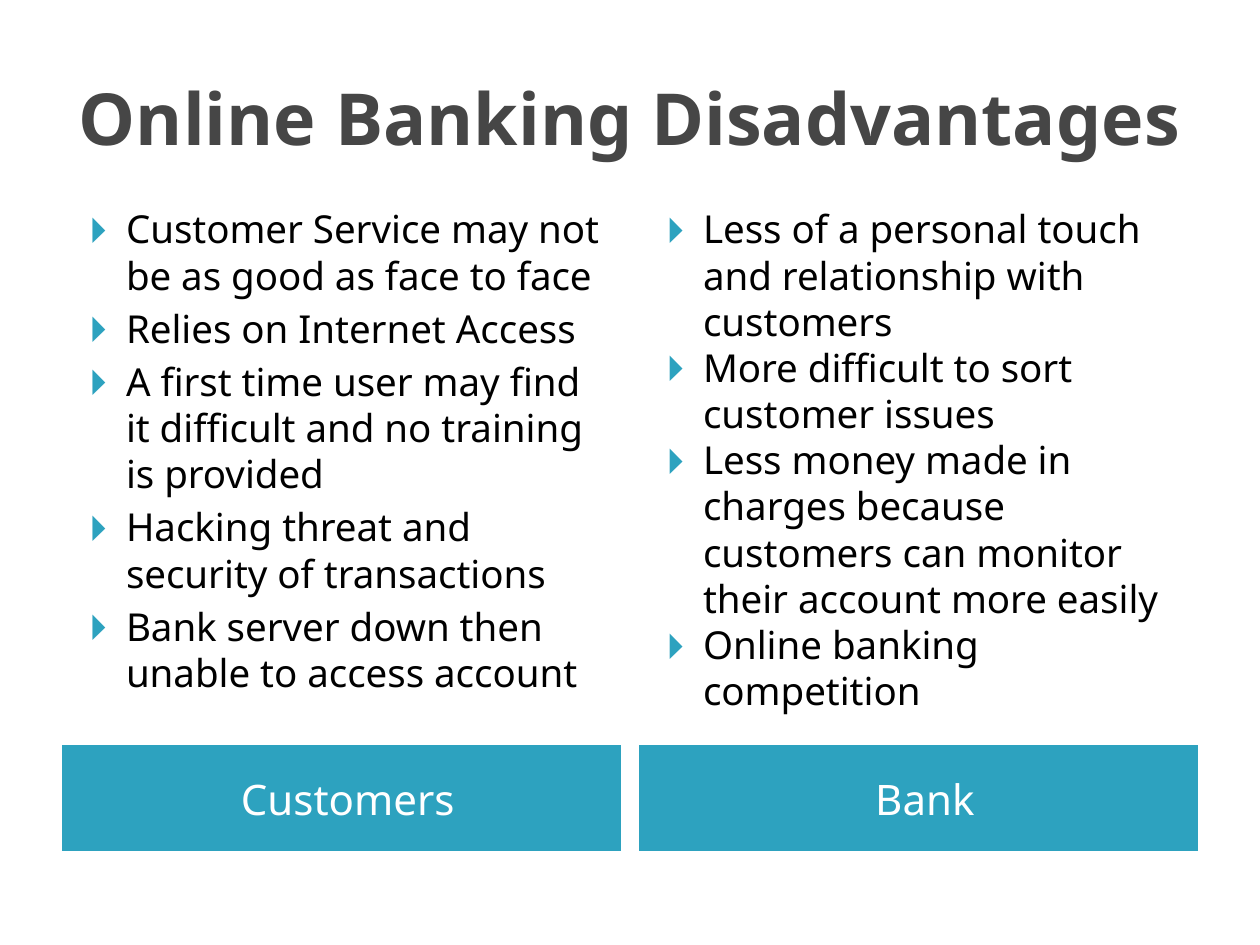
from lxml import etree
from pptx import Presentation
from pptx.dml.color import RGBColor
from pptx.enum.text import MSO_ANCHOR, PP_ALIGN
from pptx.oxml.ns import qn
from pptx.util import Inches, Pt

CENTER, LEFT = PP_ALIGN.CENTER, PP_ALIGN.LEFT
MIDDLE, TOP = MSO_ANCHOR.MIDDLE, MSO_ANCHOR.TOP

TEAL = RGBColor(0x2D, 0xA2, 0xBF)
GRAY = RGBColor(0x46, 0x46, 0x46)
BLACK = RGBColor(0, 0, 0)
WHITE = RGBColor(0xFF, 0xFF, 0xFF)
FONT = "Noto Sans"

# Two-column grid, in inches
SLIDE_WIDTH, SLIDE_HEIGHT = 10, 7.5
MARGIN, GUTTER = 0.5, 0.16
CONTENT_WIDTH = SLIDE_WIDTH - 2 * MARGIN
COLUMN_WIDTH = (CONTENT_WIDTH - GUTTER) / 2
TITLE_ROW = (0.3, 1.25)
LIST_ROW = (1.58, 4.31)
LABEL_ROW = (5.92, 0.83)

# Label, points, space between points
COLUMNS = [
    ("Customers", [
        "Customer Service may not be as good as face to face",
        "Relies on Internet Access",
        "A first time user may find it difficult and no training is provided",
        "Hacking threat and security of transactions",
        "Bank server down then unable to access account",
    ], 4),
    ("Bank", [
        "Less of a personal touch and relationship with customers",
        "More difficult to sort customer issues",
        "Less money made in charges because customers can monitor "
        "their account more easily",
        "Online banking competition",
    ], 0),
]


def place(shape, left, row, width):
    top, height = row
    shape.left, shape.top = Inches(left), Inches(top)
    shape.width, shape.height = Inches(width), Inches(height)


def add_bullet(paragraph):
    properties = paragraph._p.get_or_add_pPr()
    properties.set("marL", str(Inches(0.4)))
    properties.set("indent", str(Inches(-0.28)))
    color = etree.SubElement(properties, qn("a:buClr"))
    etree.SubElement(color, qn("a:srgbClr"), val=str(TEAL))
    etree.SubElement(properties, qn("a:buFont"), typeface=FONT)
    etree.SubElement(properties, qn("a:buChar"), char="🞂")


def write(shape, lines, size, color, bold=False, align=LEFT, anchor=TOP,
          left_inset=0.1, bullets=False, gap=0):
    frame = shape.text_frame
    frame.word_wrap = True
    frame.vertical_anchor = anchor
    frame.margin_left, frame.margin_right = Inches(left_inset), Inches(0.1)
    frame.margin_top = frame.margin_bottom = Inches(0.05)
    frame.text = "\n".join(lines)
    for index, paragraph in enumerate(frame.paragraphs):
        paragraph.alignment = align
        paragraph.space_before = Pt(gap if index else 0)
        if bullets:
            add_bullet(paragraph)
        font = paragraph.runs[0].font
        font.name, font.size, font.bold = FONT, Pt(size), bold
        font.color.rgb = color


def fill_column(label, points, left, name, lines, gap):
    # Points above, coloured label with square corners below
    place(points, left, LIST_ROW, COLUMN_WIDTH)
    write(points, lines, 22, BLACK, bullets=True, gap=gap)
    place(label, left, LABEL_ROW, COLUMN_WIDTH)
    label.fill.solid()
    label.fill.fore_color.rgb = TEAL
    label.line.color.rgb = TEAL
    label.line.width = Pt(0.75)
    outline = label._element.spPr.find(qn("a:ln"))
    etree.SubElement(outline, qn("a:miter"), lim="800000")
    write(label, [name], 24, WHITE, align=CENTER, anchor=MIDDLE,
          left_inset=0.2)


def main():
    presentation = Presentation()
    presentation.slide_width = Inches(SLIDE_WIDTH)
    presentation.slide_height = Inches(SLIDE_HEIGHT)
    layout = presentation.slide_layouts.get_by_name("Comparison")
    slide = presentation.slides.add_slide(layout)

    # Title
    title = slide.shapes.title
    place(title, MARGIN, TITLE_ROW, CONTENT_WIDTH)
    write(title, ["Online Banking Disadvantages"], 41, GRAY, bold=True,
          align=CENTER, anchor=MIDDLE)

    # Comparison columns: each has a label and a list placeholder
    bodies = list(slide.placeholders)[1:]
    for index, (name, lines, gap) in enumerate(COLUMNS):
        label, points = bodies[2 * index:2 * index + 2]
        left = MARGIN + index * (COLUMN_WIDTH + GUTTER)
        fill_column(label, points, left, name, lines, gap)

    presentation.save("out.pptx")


if __name__ == "__main__":
    main()
